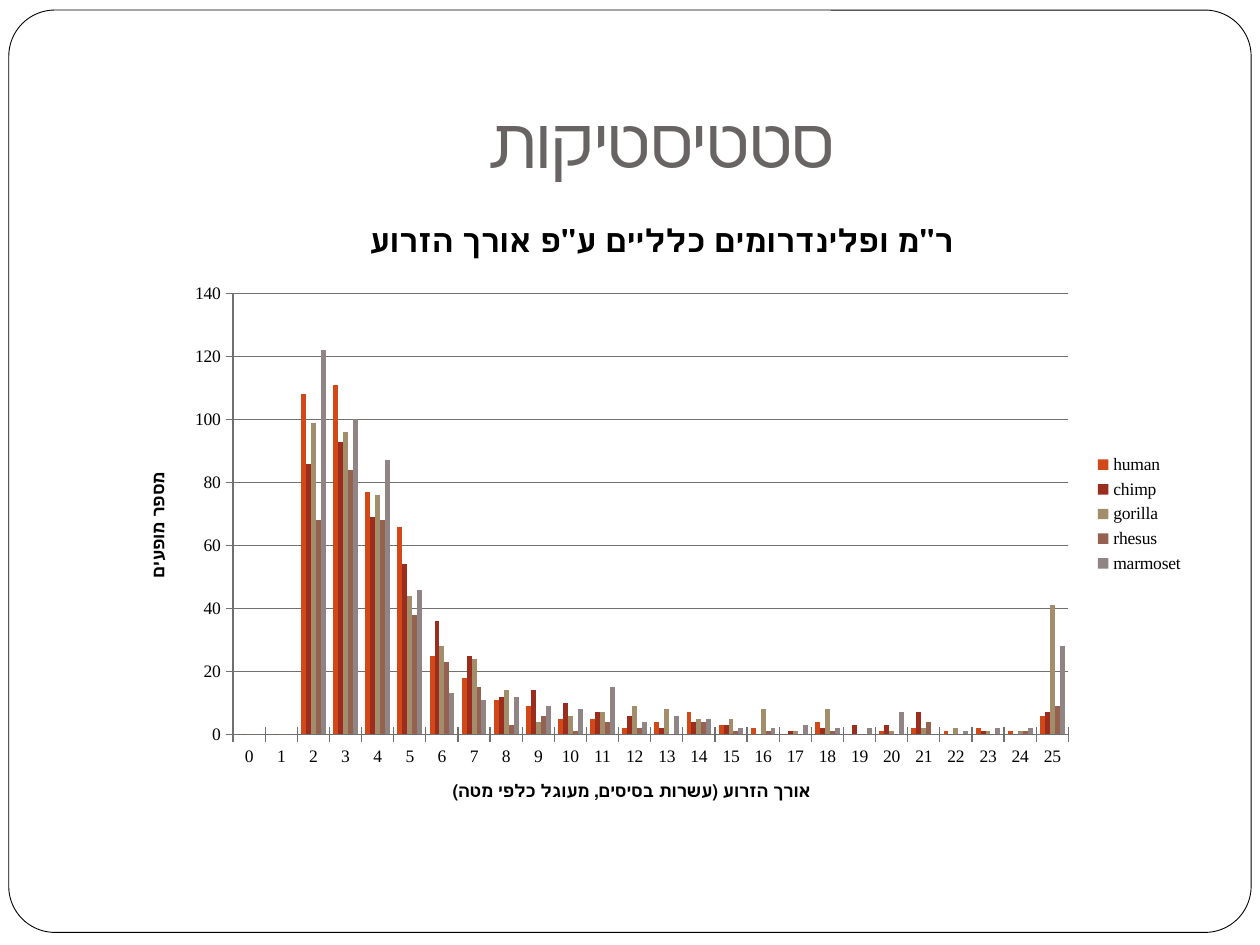
from lxml import etree
from pptx import Presentation
from pptx.chart.data import CategoryChartData
from pptx.dml.color import RGBColor
from pptx.enum.chart import XL_CHART_TYPE, XL_LEGEND_POSITION, XL_TICK_MARK
from pptx.enum.shapes import MSO_SHAPE
from pptx.enum.text import MSO_ANCHOR, PP_ALIGN
from pptx.oxml.ns import qn
from pptx.util import Inches, Pt

COLUMNS = XL_CHART_TYPE.COLUMN_CLUSTERED
LEGEND_RIGHT = XL_LEGEND_POSITION.RIGHT
CROSS, NO_TICK = XL_TICK_MARK.CROSS, XL_TICK_MARK.NONE
ROUNDED = MSO_SHAPE.ROUNDED_RECTANGLE
BOTTOM, CENTER = MSO_ANCHOR.BOTTOM, PP_ALIGN.CENTER

BLACK = RGBColor(0x00, 0x00, 0x00)
WHITE = RGBColor(0xFF, 0xFF, 0xFF)
TITLE_GRAY = RGBColor(0x69, 0x64, 0x64)
AXIS_GRAY = RGBColor(0x70, 0x70, 0x70)
TITLE_FONT, CHART_FONT = "Cabin", "Times New Roman"

# Shared left edge and width of the title and the chart
CONTENT_LEFT, CONTENT_WIDTH = Inches(1), Inches(8.5)

# Plot area as shares of the chart's size
PLOT_AREA = {"x": 0.1, "y": 0.15, "w": 0.78, "h": 0.7}

# Appearances by arm length, 0 to 25
SPECIES = [
    ("human", RGBColor(0xD3, 0x48, 0x17),
     [0, 0, 108, 111, 77, 66, 25, 18, 11, 9, 5, 5, 2,
      4, 7, 3, 2, 0, 4, 0, 1, 2, 1, 2, 1, 6]),
    ("chimp", RGBColor(0x9B, 0x2D, 0x1F),
     [0, 0, 86, 93, 69, 54, 36, 25, 12, 14, 10, 7, 6,
      2, 4, 3, 0, 1, 2, 3, 3, 7, 0, 1, 0, 7]),
    ("gorilla", RGBColor(0xA2, 0x8E, 0x6A),
     [0, 0, 99, 96, 76, 44, 28, 24, 14, 4, 6, 7, 9,
      8, 5, 5, 8, 1, 8, 0, 1, 2, 2, 1, 1, 41]),
    ("rhesus", RGBColor(0x95, 0x62, 0x51),
     [0, 0, 68, 84, 68, 38, 23, 15, 3, 6, 1, 4, 2,
      0, 4, 1, 1, 0, 1, 0, 0, 4, 0, 0, 1, 9]),
    ("marmoset", RGBColor(0x91, 0x84, 0x85),
     [0, 0, 122, 100, 87, 46, 13, 11, 12, 9, 8, 15, 4,
      6, 5, 2, 2, 3, 2, 2, 7, 0, 1, 2, 2, 28]),
]


def add_frame(slide):
    frame = slide.shapes.add_shape(
        ROUNDED, Inches(0.07), Inches(0.08), Inches(9.86), Inches(7.32))
    frame.adjustments[0] = 0.05
    frame.shadow.inherit = False
    frame.fill.solid()
    frame.fill.fore_color.rgb = WHITE
    frame.line.color.rgb = BLACK
    frame.line.width = Pt(0.5)
    # Behind the title
    tree = slide.shapes.element
    tree.remove(frame.element)
    tree.insert(2, frame.element)


def add_run(paragraph, text, size, font_name, color, bold=False):
    run = paragraph.add_run()
    run.text = text
    run.font.size = Pt(size)
    run.font.name = font_name
    run.font.bold = bold
    run.font.color.rgb = color
    return run


def set_title(slide, text):
    title = slide.shapes.title
    title.left, title.top = CONTENT_LEFT, Inches(0.3)
    title.width, title.height = CONTENT_WIDTH, Inches(1.25)
    frame = title.text_frame
    frame.vertical_anchor = BOTTOM
    frame.margin_left = frame.margin_right = frame.margin_bottom = Inches(0.1)
    frame.margin_top = Inches(0.05)
    paragraph = frame.paragraphs[0]
    paragraph.alignment = CENTER
    paragraph._p.get_or_add_pPr().set("rtl", "1")
    run = add_run(paragraph, text, 40, TITLE_FONT, TITLE_GRAY)
    # Hebrew uses the complex-script font
    complex_font = etree.SubElement(run.font._element, qn("a:cs"))
    complex_font.set("typeface", TITLE_FONT)


def set_chart_title(owner, text, size):
    """Give a chart or an axis a bold right-to-left title."""
    paragraph = (owner.chart_title if hasattr(owner, "chart_title")
                 else owner.axis_title).text_frame.paragraphs[0]
    paragraph._p.get_or_add_pPr().set("rtl", "1")
    add_run(paragraph, text, size, CHART_FONT, BLACK, bold=True)


def style_axis(axis, title):
    axis.major_tick_mark = CROSS
    axis.minor_tick_mark = NO_TICK
    axis.format.line.color.rgb = AXIS_GRAY
    set_chart_title(axis, title, 10)


def set_plot_layout(chart):
    plot_area = chart._chartSpace.chart.plotArea
    for old_layout in plot_area.findall(qn("c:layout")):
        plot_area.remove(old_layout)
    layout = etree.Element(qn("c:layout"))
    plot_area.insert(0, layout)
    manual = etree.SubElement(layout, qn("c:manualLayout"))
    settings = {"layoutTarget": "inner", "xMode": "edge", "yMode": "edge"}
    for name, value in {**settings, **PLOT_AREA}.items():
        etree.SubElement(manual, qn(f"c:{name}")).set("val", str(value))


def add_species_chart(slide):
    data = CategoryChartData()
    data.categories = [str(length) for length in range(26)]
    for name, _, values in SPECIES:
        data.add_series(name, values)
    chart = slide.shapes.add_chart(
        COLUMNS, CONTENT_LEFT, Inches(1.58), CONTENT_WIDTH, Inches(5), data).chart
    chart.font.size = Pt(10)
    chart.font.name = CHART_FONT
    chart.font.color.rgb = BLACK
    set_chart_title(chart, 'ר"מ ופלינדרומים כלליים ע"פ אורך הזרוע', 18)

    # Axes and gridlines
    style_axis(chart.category_axis, "אורך הזרוע (עשרות בסיסים, מעוגל כלפי מטה)")
    style_axis(chart.value_axis, "מספר מופעים")
    chart.value_axis.minimum_scale = 0
    chart.value_axis.maximum_scale = 140
    chart.value_axis.major_unit = 20
    chart.value_axis.major_gridlines.format.line.color.rgb = AXIS_GRAY

    # Columns
    plot = chart.plots[0]
    plot.vary_by_categories = False
    plot.gap_width = 150
    plot.overlap = 0
    for series, (_, color, _) in zip(plot.series, SPECIES):
        series.format.fill.solid()
        series.format.fill.fore_color.rgb = color

    # Legend and plot position
    chart.has_legend = True
    chart.legend.position = LEGEND_RIGHT
    chart.legend.include_in_layout = False
    set_plot_layout(chart)


def main():
    presentation = Presentation()
    presentation.slide_width, presentation.slide_height = Inches(10), Inches(7.5)
    slide = presentation.slides.add_slide(presentation.slide_layouts[5])
    add_frame(slide)
    set_title(slide, "סטטיסטיקות")
    add_species_chart(slide)
    presentation.save("out.pptx")


if __name__ == "__main__":
    main()
